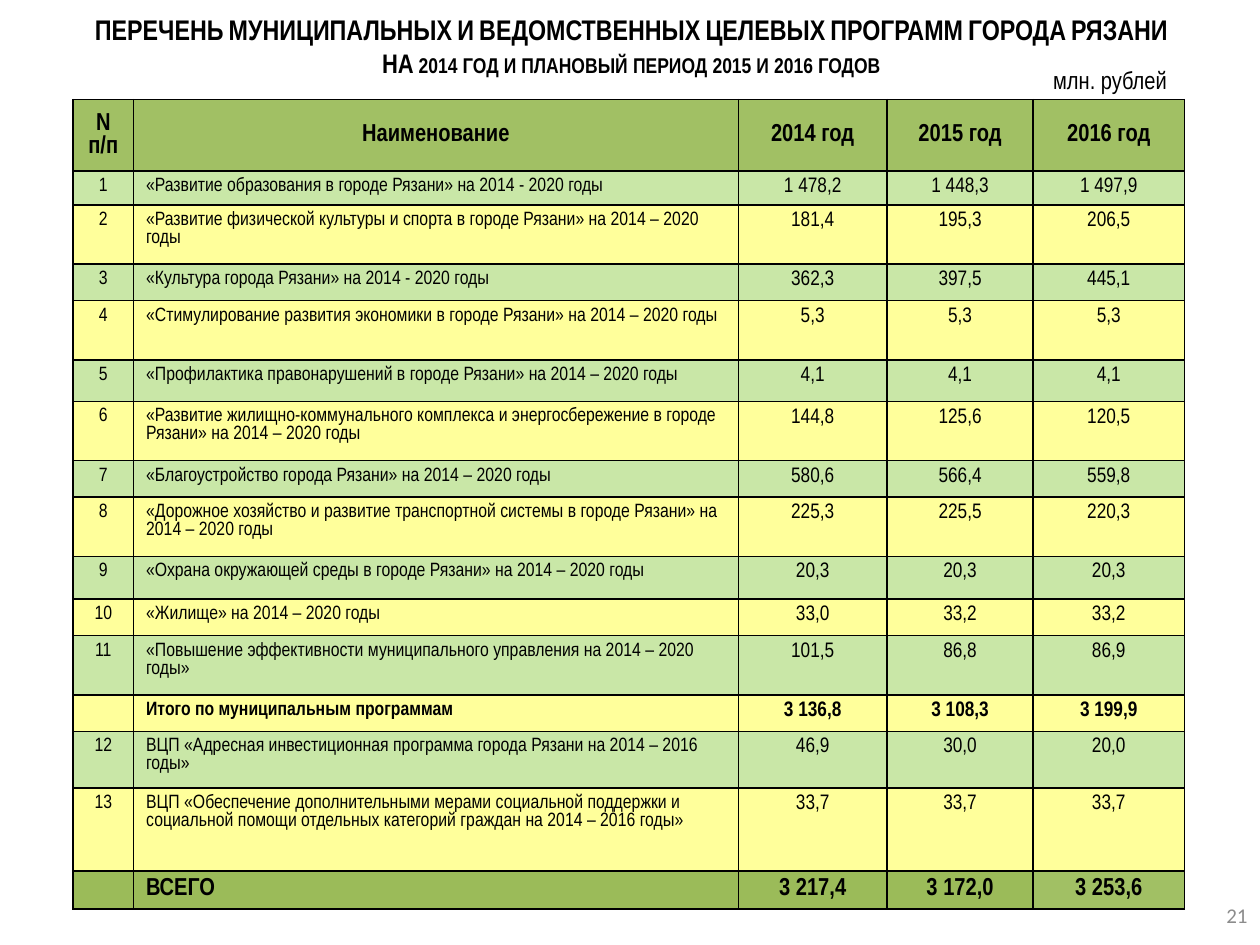
from lxml.etree import SubElement
from pptx import Presentation
from pptx.dml.color import RGBColor
from pptx.enum.text import MSO_ANCHOR, PP_ALIGN
from pptx.oxml.ns import qn
from pptx.util import Inches, Pt

# Content
TITLE = ("ПЕРЕЧЕНЬ МУНИЦИПАЛЬНЫХ И ВЕДОМСТВЕННЫХ ЦЕЛЕВЫХ ПРОГРАММ ГОРОДА РЯЗАНИ",
         "НА 2014 год и плановый период 2015 и 2016 годов")
UNIT = "млн. рублей"
PAGE = "21"
HEAD = ("N п/п", "Наименование", "2014 год", "2015 год", "2016 год")
ROWS = [
    ("1", "«Развитие образования в городе Рязани» на 2014 - 2020 годы",
     "1 478,2", "1 448,3", "1 497,9"),
    ("2", "«Развитие физической культуры и спорта в городе Рязани» на 2014 – 2020 годы",
     "181,4", "195,3", "206,5"),
    ("3", "«Культура города Рязани» на 2014 - 2020 годы",
     "362,3", "397,5", "445,1"),
    ("4", "«Стимулирование развития экономики в городе Рязани» на 2014 – 2020 годы",
     "5,3", "5,3", "5,3"),
    ("5", "«Профилактика правонарушений в городе Рязани» на 2014 – 2020 годы",
     "4,1", "4,1", "4,1"),
    ("6", "«Развитие жилищно-коммунального комплекса и энергосбережение в городе "
     "Рязани» на 2014 – 2020 годы", "144,8", "125,6", "120,5"),
    ("7", "«Благоустройство города Рязани» на 2014 – 2020 годы",
     "580,6", "566,4", "559,8"),
    ("8", "«Дорожное хозяйство и развитие транспортной системы в городе Рязани» "
     "на 2014 – 2020 годы", "225,3", "225,5", "220,3"),
    ("9", "«Охрана окружающей среды в городе Рязани» на 2014 – 2020 годы",
     "20,3", "20,3", "20,3"),
    ("10", "«Жилище» на 2014 – 2020 годы", "33,0", "33,2", "33,2"),
    ("11", "«Повышение эффективности муниципального управления на 2014 – 2020 годы»",
     "101,5", "86,8", "86,9"),
    ("", "Итого по муниципальным программам", "3 136,8", "3 108,3", "3 199,9"),
    ("12", "ВЦП «Адресная инвестиционная программа города Рязани на 2014 – 2016 годы»",
     "46,9", "30,0", "20,0"),
    ("13", "ВЦП «Обеспечение дополнительными мерами социальной поддержки и социальной "
     "помощи отдельных категорий граждан на 2014 – 2016 годы»", "33,7", "33,7", "33,7"),
]
TOTAL = ("", "ВСЕГО", "3 217,4", "3 172,0", "3 253,6")

THEME = {
    "font": "Arial Narrow", "page font": "Calibri",
    "ink": "000000", "page ink": "8C8C8C",
    "head": "A1C064", "bands": ("C9E7A7", "FFFF9B"), "total": "9BBB59",
    "title": (16.2, 15.3), "big": 14, "text": 11, "value": 12, "page": 12,
    "line": 1,
}

# Grid, in inches
WIDE, HIGH = 10, 7.5
LEFT, TOP = 0.58, 0.79
COLS = (0.48, 4.8, 1.18, 1.16, 1.2)
TALLS = (0.44, 0.27, 0.47, 0.29, 0.47, 0.33, 0.47, 0.29,
         0.47, 0.34, 0.29, 0.47, 0.29, 0.45, 0.66, 0.3)


def style(para, size, bold=False, font=THEME["font"], ink=THEME["ink"],
          align=PP_ALIGN.CENTER):
    para.alignment = align
    para.font.name = font
    para.font.bold = bold
    para.font.color.rgb = RGBColor.from_string(ink)
    if size:
        para.font.size = Pt(size)


def add_box(slide, place, anchor):
    frame = slide.shapes.add_textbox(*map(Inches, place)).text_frame
    frame.word_wrap = True
    frame.vertical_anchor = anchor
    return frame.paragraphs[0]


def add_edges(cell):
    props = cell._tc.get_or_add_tcPr()
    for side in ("lnL", "lnR", "lnT", "lnB"):
        line = SubElement(props, qn("a:" + side), w=str(Pt(THEME["line"])))
        fill = SubElement(line, qn("a:solidFill"))
        SubElement(fill, qn("a:srgbClr"), val=THEME["ink"])


def fill_cell(cell, text, color, size, bold, align, anchor):
    add_edges(cell)
    cell.fill.solid()
    cell.fill.fore_color.rgb = RGBColor.from_string(color)
    cell.vertical_anchor = anchor
    if anchor == MSO_ANCHOR.TOP:
        cell.margin_bottom = 0
    para = cell.text_frame.paragraphs[0]
    style(para, size, bold, align=align)
    if text:
        para.add_run().text = text
    else:
        # An empty cell must not stretch its row
        end = SubElement(para._p, qn("a:endParaRPr"), sz=str(size * 100))
        SubElement(end, qn("a:latin"), typeface=THEME["font"])


def add_grid(slide):
    data = [HEAD, *ROWS, TOTAL]
    last = len(data) - 1
    grid = slide.shapes.add_table(
        len(data), len(COLS), Inches(LEFT), Inches(TOP),
        Inches(sum(COLS)), Inches(sum(TALLS))).table
    for col, width in zip(grid.columns, COLS):
        col.width = Inches(width)
    for i, (row, tall) in enumerate(zip(data, TALLS)):
        grid.rows[i].height = Inches(tall)
        edge = i in (0, last)
        for j, text in enumerate(row):
            if i == 0 or (i == last and j == len(COLS) - 1):
                color = THEME["head"]
            elif i == last:
                color = THEME["total"]
            else:
                color = THEME["bands"][(i - 1) % 2]
            size = THEME["big"] if edge else THEME["value" if j > 1 else "text"]
            name = i > 0 and j == 1
            fill_cell(grid.cell(i, j), text, color, size,
                      bold=edge or not row[0],
                      align=PP_ALIGN.LEFT if name else PP_ALIGN.CENTER,
                      anchor=MSO_ANCHOR.TOP if i else MSO_ANCHOR.MIDDLE)


def main():
    deck = Presentation()
    deck.slide_width, deck.slide_height = Inches(WIDE), Inches(HIGH)
    slide = deck.slides.add_slide(deck.slide_layouts[6])

    # Title in small capitals
    para = add_box(slide, (0.03, 0.05, 9.96, 0.47), MSO_ANCHOR.TOP)
    style(para, None, bold=True)
    for i, (text, size) in enumerate(zip(TITLE, THEME["title"])):
        if i:
            para.add_line_break()
        run = para.add_run()
        run.text = text
        run.font.size = Pt(size)
        run._r.get_or_add_rPr().set("cap", "small")

    # Table of programmes
    add_grid(slide)

    # Unit of measure
    para = add_box(slide, (8.22, 0.44, 1.18, 0.39), MSO_ANCHOR.MIDDLE)
    style(para, THEME["big"])
    para.add_run().text = UNIT

    # Page number
    para = add_box(slide, (7.66, 7.08, 2.34, 0.36), MSO_ANCHOR.MIDDLE)
    style(para, THEME["page"], font=THEME["page font"],
          ink=THEME["page ink"], align=PP_ALIGN.RIGHT)
    para.add_run().text = PAGE

    deck.save("out.pptx")


if __name__ == "__main__":
    main()
